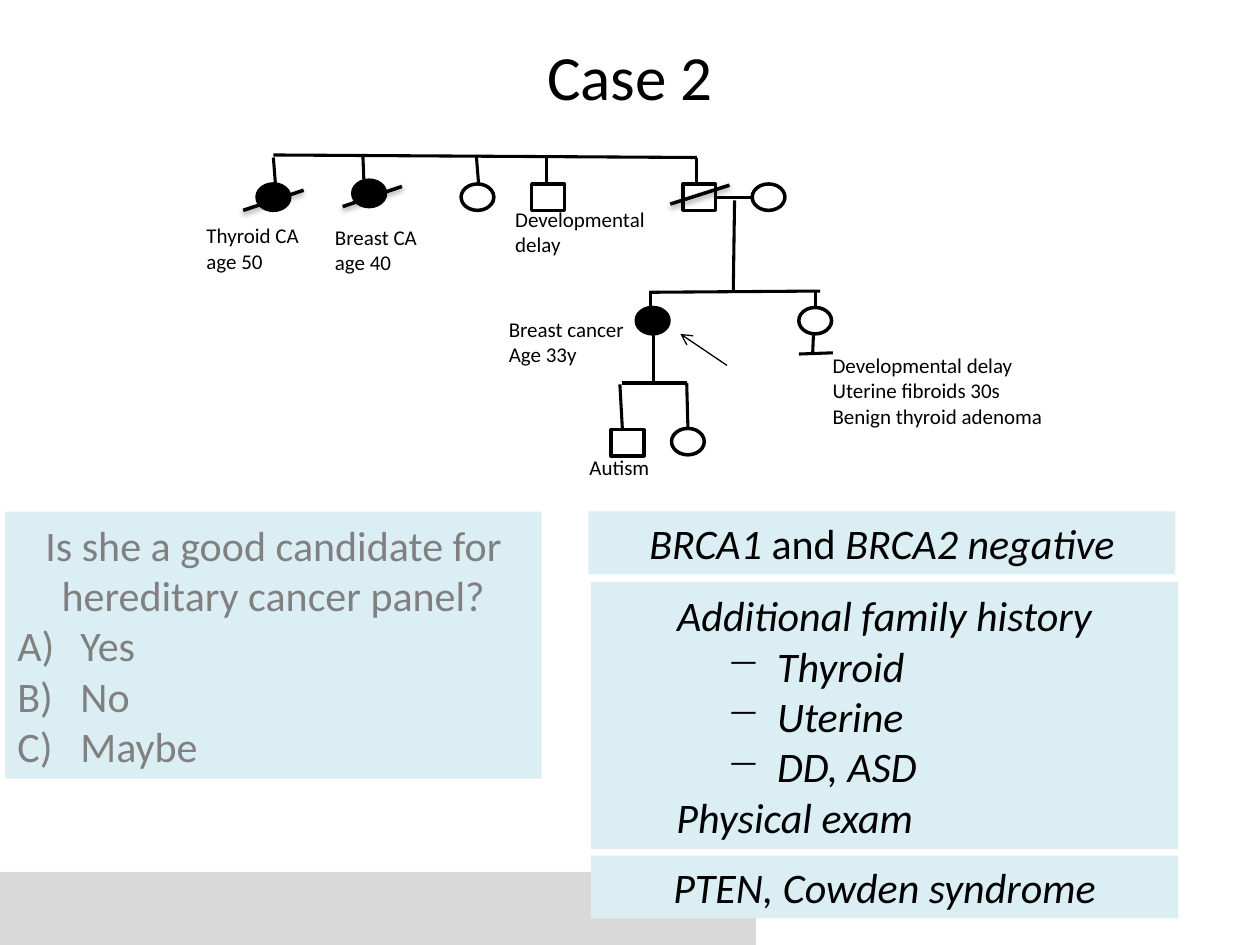
"""Build the Case 2 slide: a family pedigree above a question and its findings."""
from dataclasses import dataclass
from typing import Any

from lxml import etree
from pptx import Presentation
from pptx import util as u
from pptx.dml.color import RGBColor
from pptx.enum import shapes, text
from pptx.oxml.ns import qn

BLACK = RGBColor(0x00, 0x00, 0x00)
WHITE = RGBColor(0xFF, 0xFF, 0xFF)
GREY = RGBColor(0x80, 0x80, 0x80)
BAND = RGBColor(0xD9, 0xD9, 0xD9)
PANEL = RGBColor(0xDB, 0xEE, 0xF4)
FEMALE, MALE = shapes.MSO_SHAPE.OVAL, shapes.MSO_SHAPE.RECTANGLE
COLUMNS, ROWS = 100, 75
NODE_WIDTH, NODE_HEIGHT = 2.6, 2.1


@dataclass
class CaseSlide:
    """Style, grid and current slide."""
    deck: Any
    slide: Any
    font: str = "Calibri"

    def x(self, columns):
        return round(self.deck.slide_width * columns / COLUMNS)

    def y(self, rows):
        return round(self.deck.slide_height * rows / ROWS)

    def box(self, left, top, width, height):
        return self.x(left), self.y(top), self.x(width), self.y(height)

    def run(self, paragraph, words, size, colour=BLACK, italic=False):
        run = paragraph.add_run()
        run.text = words
        run.font.name, run.font.size = self.font, u.Pt(size)
        run.font.color.rgb, run.font.italic = colour, italic

    def title(self, words, box):
        title = self.slide.shapes.title
        title.left, title.top, title.width, title.height = self.box(*box)
        title.text_frame.vertical_anchor = text.MSO_ANCHOR.MIDDLE
        paragraph = title.text_frame.paragraphs[0]
        paragraph.alignment = text.PP_ALIGN.CENTER
        self.run(paragraph, words, 36)

    def block(self, box, fill, kind=MALE, outline=False):
        block = self.slide.shapes.add_shape(kind, *self.box(*box))
        block.shadow.inherit = False
        block.fill.solid()
        block.fill.fore_color.rgb = fill
        if outline:
            block.line.color.rgb, block.line.width = BLACK, u.Pt(2)
        else:
            block.line.fill.background()
        return block

    def person(self, left, top, kind, fill=WHITE):
        self.block((left, top, NODE_WIDTH, NODE_HEIGHT), fill, kind, True)

    def panel(self, box, heading, items=(), colour=BLACK):
        frame = self.block(box, PANEL).text_frame
        frame.word_wrap = True
        frame.vertical_anchor = text.MSO_ANCHOR.MIDDLE
        frame.auto_size = text.MSO_AUTO_SIZE.SHAPE_TO_FIT_TEXT
        paragraph = frame.paragraphs[0]
        paragraph.alignment = text.PP_ALIGN.CENTER
        for words, italic in heading:
            self.run(paragraph, words, 24, colour, italic)
        for words, italic, margin, hanging, tag, marker in items:
            paragraph = frame.add_paragraph()
            paragraph.alignment = text.PP_ALIGN.LEFT
            properties = paragraph._p.get_or_add_pPr()
            properties.set("marL", str(self.x(margin)))
            properties.set("indent", str(-self.x(hanging)))
            etree.SubElement(properties, qn(tag), **marker)
            self.run(paragraph, words, 24, colour, italic)

    def label(self, box, *lines):
        frame = self.slide.shapes.add_textbox(*self.box(*box)).text_frame
        frame.word_wrap = True
        frame.auto_size = text.MSO_AUTO_SIZE.SHAPE_TO_FIT_TEXT
        for index, words in enumerate(lines):
            paragraph = frame.add_paragraph() if index else frame.paragraphs[0]
            self.run(paragraph, words, 12)

    def link(self, x1, y1, x2, y2, width=1.75, arrow=False, shadow=False):
        link = self.slide.shapes.add_connector(
            shapes.MSO_CONNECTOR.STRAIGHT, self.x(x1), self.y(y1), self.x(x2), self.y(y2))
        link.line.color.rgb, link.line.width = BLACK, u.Pt(width)
        properties = link._element.spPr
        if arrow:
            etree.SubElement(properties.find(qn("a:ln")), qn("a:tailEnd"), type="arrow")
        effects = etree.SubElement(properties, qn("a:effectLst"))
        if shadow:
            outer = etree.SubElement(effects, qn("a:outerShdw"), blurRad="40000",
                                     dist="20000", dir="5400000", rotWithShape="0")
            shade = etree.SubElement(outer, qn("a:srgbClr"), val=str(BLACK))
            etree.SubElement(shade, qn("a:alpha"), val="38000")


def draw_pedigree(case):
    """Draw three generations with their links and labels."""
    siblings = [(21.7, 12.3, 55.3, 12.5), (21.7, 12.5, 21.9, 15.1), (28.8, 12.3, 28.9, 14.8),
                (37.8, 12.3, 38, 14.8), (43.4, 12.5, 43.4, 14.6), (55.3, 12.5, 55.3, 14.7)]
    parents = [(56.9, 15.7, 59.7, 15.7), (58.3, 15.9, 58.2, 23.1)]
    daughters = [(51.6, 23.2, 65.1, 23.1), (51.6, 23.1, 51.6, 24.4), (64.7, 23.2, 64.7, 24.3)]
    childless = [(64.6, 25.6, 64.5, 28), (63.4, 28.1, 66.1, 28)]
    children = [(51.9, 26.5, 51.9, 30.3), (49.4, 30.4, 54.5, 30.4),
                (49.2, 30.5, 49.4, 34.1), (54.5, 30.4, 54.6, 34)]
    for ends in siblings + parents + daughters + childless + children:
        case.link(*ends)

    people = [(20.4, 14.6, FEMALE, BLACK), (28, 14.3, FEMALE, BLACK), (36.6, 14.6, FEMALE),
              (42.2, 14.6, MALE), (54.2, 14.6, MALE), (59.7, 14.6, FEMALE),
              (50.5, 24.4, FEMALE, BLACK), (63.4, 24.4, FEMALE),
              (48.5, 34.1, MALE), (53.3, 34, FEMALE)]
    for person in people:
        case.person(*person)

    for deceased in [(19.3, 16.7, 24.1, 15.1), (27.2, 16.4, 31.9, 14.8), (53.2, 16.2, 57.9, 14.7)]:
        case.link(*deceased, width=2, shadow=True)
    case.link(57.7, 29, 54, 26.5, width=0.75, arrow=True)

    case.label((15.4, 17.2, 10.1, 5), "Thyroid CA age 50")
    case.label((25.6, 17.3, 10.1, 5), "Breast CA age 40")
    case.label((39.9, 15.9, 12.5, 5), "Developmental delay")
    case.label((39.4, 24.6, 11.4, 5), "Breast cancer", "Age 33y")
    case.label((65.1, 27.5, 19.6, 7.1),
               "Developmental delay", "Uterine fibroids 30s", "Benign thyroid adenoma")
    case.label((45.8, 35.6, 9.8, 3), "Autism")


def draw_panels(case):
    """Draw the question and the three findings."""
    answers = [(answer, False, 5, 5, "a:buAutoNum", {"type": "alphaUcParenR"})
               for answer in ("Yes", "No", "Maybe")]
    history = [(finding, True, 13.8, 4, "a:buChar", {"char": "─"})
               for finding in ("Thyroid", "Uterine", "DD, ASD")]
    exam = ("Physical exam", True, 9.8, 4, "a:buNone", {})
    case.panel((0.4, 40.6, 42.6, 21.2),
               [("Is she a good candidate for hereditary cancer panel?", False)], answers, GREY)
    case.panel((46.7, 40.6, 46.6, 5),
               [("BRCA1", True), (" and ", False), ("BRCA2 negative", True)])
    case.panel((46.9, 46.2, 46.6, 21.2), [("Additional family history", True)], history + [exam])
    case.panel((46.9, 67.9, 46.6, 5), [("PTEN, Cowden syndrome", True)])


def main():
    deck = Presentation()
    deck.slide_width, deck.slide_height = u.Inches(10), u.Inches(7.5)
    case = CaseSlide(deck, deck.slides.add_slide(deck.slide_layouts[5]))
    case.block((0, 69.2, 60, 5.8), BAND)
    case.title("Case 2", (5, -0.3, 90, 12.5))
    draw_pedigree(case)
    draw_panels(case)
    deck.save("out.pptx")


if __name__ == "__main__":
    main()
